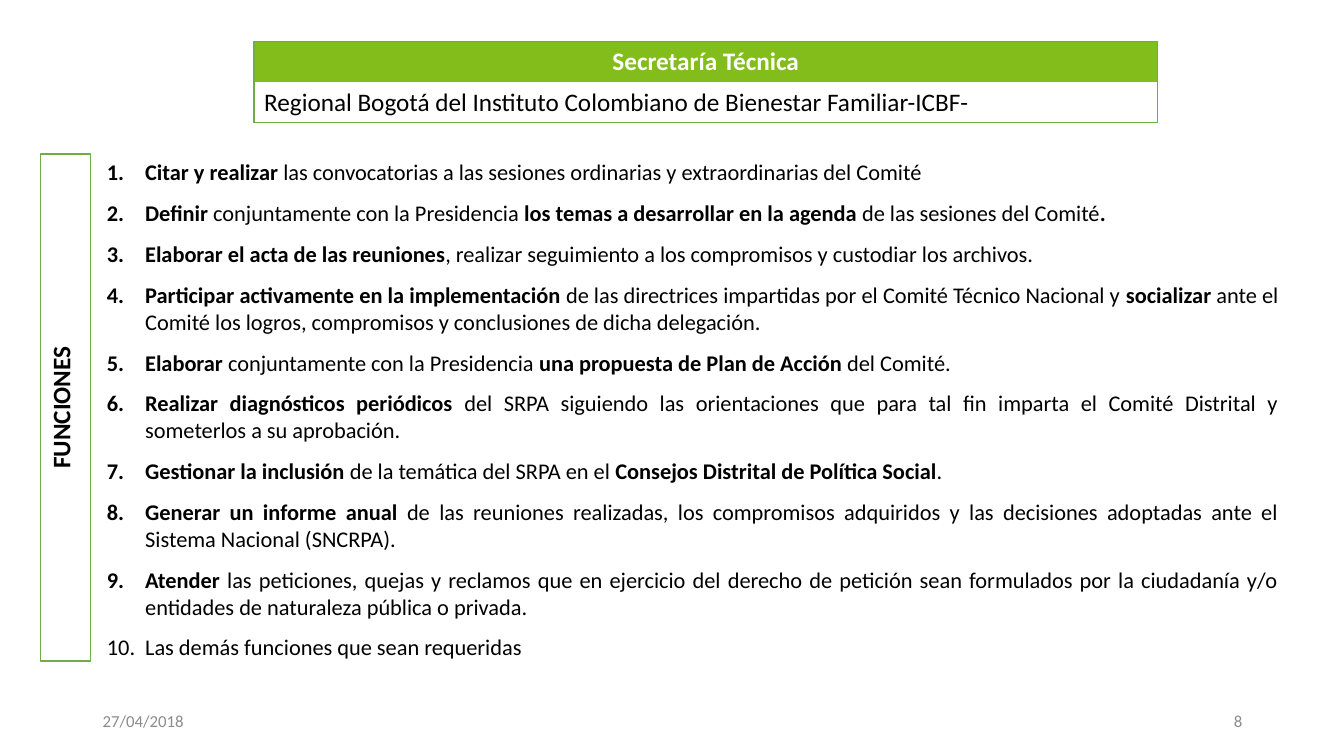
from pptx import Presentation
from pptx.dml.color import RGBColor
from pptx.enum.shapes import MSO_SHAPE
from pptx.enum.text import MSO_ANCHOR, MSO_AUTO_SIZE, PP_ALIGN
from pptx.oxml.ns import qn
from pptx.util import Inches, Pt
from lxml import etree

LEFT, CENTER, RIGHT, JUSTIFY = PP_ALIGN.LEFT, PP_ALIGN.CENTER, PP_ALIGN.RIGHT, PP_ALIGN.JUSTIFY
TOP, MIDDLE = MSO_ANCHOR.TOP, MSO_ANCHOR.MIDDLE
NO_AUTOFIT = MSO_AUTO_SIZE.NONE
RECTANGLE = MSO_SHAPE.RECTANGLE

FONT = "Calibri"
COLORS = {"header": "83BD1C", "border": "70AD47", "white": "FFFFFF",
          "black": "000000", "footer": "8C8C8C"}

# Content: text, bold, color, alignment
TABLE_ROWS = [
    ("Secretaría Técnica", True, "white", CENTER),
    ("Regional Bogotá del Instituto Colombiano de Bienestar Familiar-ICBF-", False, "black", LEFT),
]
SIDE_LABEL = "FUNCIONES"
# Each function is a list of (text, bold) runs
FUNCTIONS = [
    [("Citar y realizar ", True),
     ("las convocatorias a las sesiones ordinarias y extraordinarias del Comité", False)],
    [("Definir ", True), ("conjuntamente con la Presidencia ", False),
     ("los temas a desarrollar en la agenda ", True),
     ("de las sesiones del Comité", False), (".", True)],
    [("Elaborar el acta de las reuniones", True),
     (", realizar seguimiento a los compromisos y custodiar los archivos.", False)],
    [("Participar activamente en la implementación", True),
     (" de las directrices impartidas por el Comité Técnico Nacional y ", False),
     ("socializar", True),
     (" ante el Comité los logros, compromisos y conclusiones de dicha delegación.", False)],
    [("Elaborar", True), (" conjuntamente con la Presidencia ", False),
     ("una propuesta de Plan de Acción ", True), ("del Comité.", False)],
    [("Realizar diagnósticos periódicos ", True),
     ("del SRPA siguiendo las orientaciones que para tal fin imparta el Comité Distrital "
      "y someterlos a su aprobación.", False)],
    [("Gestionar la inclusión ", True), ("de la temática del SRPA en el ", False),
     ("Consejos Distrital de Política Social", True), (".", False)],
    [("Generar un informe anual ", True),
     ("de las reuniones realizadas, los compromisos adquiridos y las decisiones adoptadas "
      "ante el Sistema Nacional (SNCRPA).", False)],
    [("Atender ", True),
     ("las peticiones, quejas y reclamos que en ejercicio del derecho de petición sean "
      "formulados por la ciudadanía y/o entidades de naturaleza pública o privada.", False)],
    [("Las demás funciones que sean requeridas", False)],
]
# Footer: text, left, alignment
FOOTERS = [("27/04/2018", 0.92, LEFT), ("8", 9.42, RIGHT)]


def rgb(name):
    return RGBColor.from_string(COLORS[name])


def add_run(p, text, size, color="black", bold=False):
    r = p.add_run()
    r.text = text
    r.font.name = FONT
    r.font.size = Pt(size)
    r.font.bold = bold
    r.font.color.rgb = rgb(color)


def set_borders(cell, visible):
    tcPr = cell._tc.get_or_add_tcPr()
    for side in "LRTB":
        ln = etree.SubElement(tcPr, qn(f"a:ln{side}"), w=str(Pt(1)))
        if side in visible:
            fill = etree.SubElement(ln, qn("a:solidFill"))
            etree.SubElement(fill, qn("a:srgbClr"), val=COLORS["border"])
        else:
            etree.SubElement(ln, qn("a:noFill"))


def number_paragraph(p, indent):
    pPr = p._p.get_or_add_pPr()
    pPr.set("marL", str(indent))
    pPr.set("indent", str(-indent))
    etree.SubElement(pPr, qn("a:buFont"), typeface="+mj-lt")
    etree.SubElement(pPr, qn("a:buAutoNum"), type="arabicPeriod")


prs = Presentation()
prs.slide_width, prs.slide_height = Inches(13.33), Inches(7.5)
slide = prs.slides.add_slide(prs.slide_layouts[1])
title = slide.shapes.title
title._element.getparent().remove(title._element)

# Footer texts
for text, left, align in FOOTERS:
    sp = slide.shapes.add_textbox(Inches(left), Inches(6.95), Inches(3), Inches(0.4))
    tf = sp.text_frame
    tf.word_wrap = True
    tf.vertical_anchor = MIDDLE
    p = tf.paragraphs[0]
    p.alignment = align
    add_run(p, text, 12, "footer")

# Heading table
table = slide.shapes.add_table(len(TABLE_ROWS), 1, Inches(2.52), Inches(0.41),
                               Inches(8.96), Inches(0.81)).table
table.first_row = table.horz_banding = False
for i, (text, bold, color, align) in enumerate(TABLE_ROWS):
    cell = table.cell(i, 0)
    set_borders(cell, "LRT" if i == 0 else "LRB")
    cell.fill.solid()
    cell.fill.fore_color.rgb = rgb("header" if i == 0 else "white")
    p = cell.text_frame.paragraphs[0]
    p.alignment = align
    add_run(p, text, 18, color, bold)

# Numbered functions
body = slide.placeholders[1]
body.left, body.top, body.width, body.height = (Inches(v) for v in (0.96, 1.52, 11.82, 5.13))
tf = body.text_frame
tf.word_wrap = True
tf.auto_size = NO_AUTOFIT
tf.vertical_anchor = TOP
for i, runs in enumerate(FUNCTIONS):
    p = tf.paragraphs[0] if i == 0 else tf.add_paragraph()
    p.alignment = JUSTIFY
    p.space_before = Pt(10 if i else 0)
    number_paragraph(p, Inches(0.38))
    for text, bold in runs:
        add_run(p, text, 16, bold=bold)

# Vertical side label
sp = slide.shapes.add_shape(RECTANGLE, Inches(0.4), Inches(1.53), Inches(0.5), Inches(5.03))
sp.shadow.inherit = False
sp.fill.solid()
sp.fill.fore_color.rgb = rgb("white")
sp.line.color.rgb = rgb("border")
sp.line.width = Pt(1)
tf = sp.text_frame
tf.word_wrap = True
tf.vertical_anchor = TOP
tf._txBody.bodyPr.set("vert", "vert270")
p = tf.paragraphs[0]
p.alignment = CENTER
add_run(p, SIDE_LABEL, 18, bold=True)

prs.save("out.pptx")
